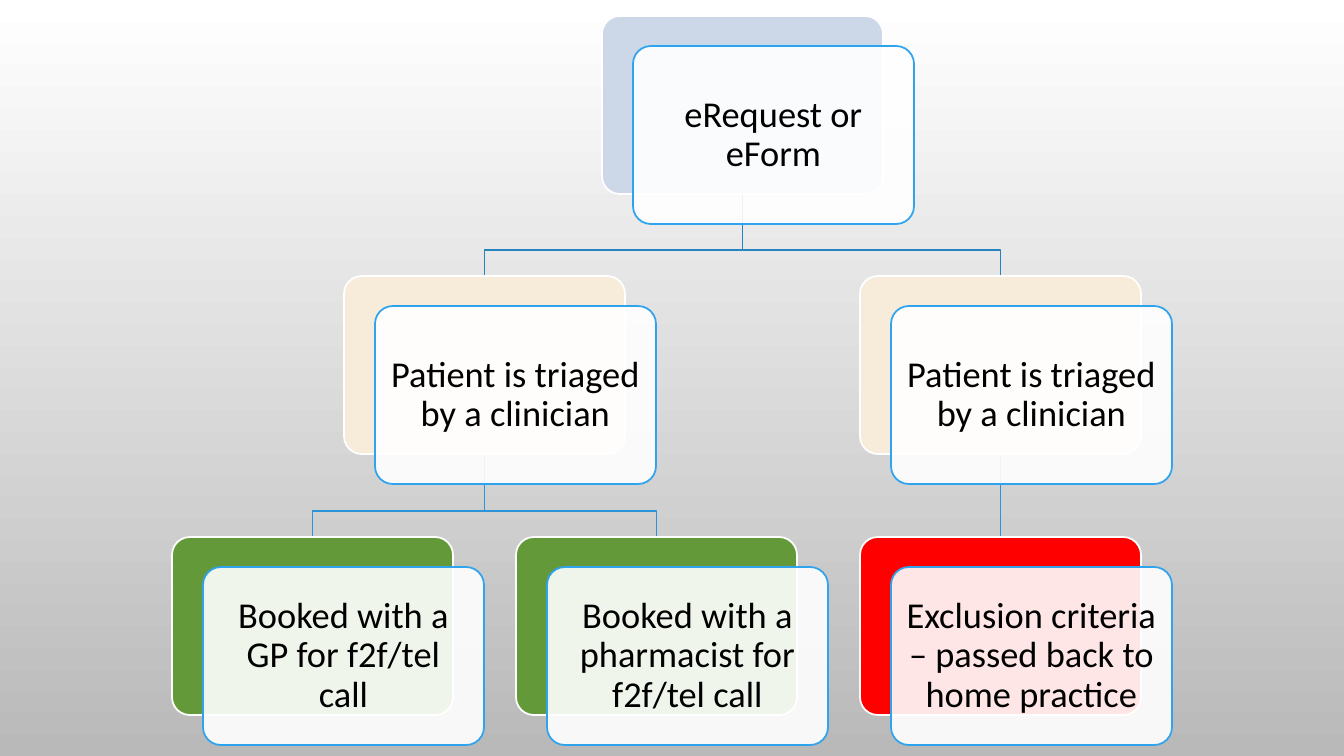
from lxml import etree
from pptx import Presentation
from pptx.dml.color import RGBColor
from pptx.enum.shapes import MSO_CONNECTOR, MSO_SHAPE
from pptx.enum.text import MSO_ANCHOR, PP_ALIGN
from pptx.oxml.ns import qn
from pptx.util import Pt

PX = 914400 / 100.8
ROUNDED = MSO_SHAPE.ROUNDED_RECTANGLE
STRAIGHT = MSO_CONNECTOR.STRAIGHT
MIDDLE = MSO_ANCHOR.MIDDLE
CENTER = PP_ALIGN.CENTER
BOTTOM_SITE, TOP_SITE = 2, 0

COLORS = {
    "white": "FFFFFF", "background_end": "B9B9B9", "text": "000000",
    "request": "CCD8E7", "triage": "F7EBD9", "booked": "649939",
    "excluded": "FF0000", "card_line": "2FA3EE",
    "upper_link": "2683BF", "lower_link": "2B94D8",
}
CARD_WIDTH, CARD_HEIGHT = 281, 178
OFFSET_X, OFFSET_Y = 31, 30
COLUMN = 172
ROW_TOPS = [16, 276, 537]
BRANCH_GAP = 26

# name: (column, row, colour, text)
STEPS = {
    "request": (3.5, 0, "request", "eRequest or eForm"),
    "triage_left": (2, 1, "triage", "Patient is triaged by a clinician"),
    "gp": (1, 2, "booked", "Booked with a GP for f2f/tel call"),
    "pharmacist": (3, 2, "booked", "Booked with a pharmacist for f2f/tel call"),
    "triage_right": (5, 1, "triage", "Patient is triaged by a clinician"),
    "exclusion": (5, 2, "excluded", "Exclusion criteria – passed back to home practice"),
}
LINKS = [
    ("request", "triage_left", "upper_link"),
    ("triage_left", "gp", "lower_link"),
    ("triage_left", "pharmacist", "lower_link"),
    ("request", "triage_right", "upper_link"),
    ("triage_right", "exclusion", "lower_link"),
]


def px(length):
    return round(length * PX)


def add_card(left, top, fill, line):
    card = slide.shapes.add_shape(
        ROUNDED, px(left), px(top), px(CARD_WIDTH), px(CARD_HEIGHT))
    card.adjustments[0] = 0.1
    card.shadow.inherit = False
    card.fill.solid()
    card.fill.fore_color.rgb = RGBColor.from_string(COLORS[fill])
    card.line.color.rgb = RGBColor.from_string(COLORS[line])
    card.line.width = Pt(1.25)
    return card


presentation = Presentation()
presentation.slide_width = px(1344)
presentation.slide_height = px(756)
slide = presentation.slides.add_slide(presentation.slide_layouts[6])

background = slide.background.fill
background.gradient()
background.gradient_angle = 270
for stop, color in zip(background.gradient_stops, ("white", "background_end")):
    stop.color.rgb = RGBColor.from_string(COLORS[color])

back_cards = {}
for name, (column, row, color, text) in STEPS.items():
    left, top = COLUMN * column, ROW_TOPS[row]
    back_cards[name] = add_card(left, top, color, "white")
    front_card = add_card(left + OFFSET_X, top + OFFSET_Y, "white", "card_line")
    front_color = front_card.fill._xPr.find(".//" + qn("a:srgbClr"))
    etree.SubElement(front_color, qn("a:alpha"), val="90000")

    frame = front_card.text_frame
    frame.word_wrap = True
    frame.vertical_anchor = MIDDLE
    for side in ("left", "top", "right", "bottom"):
        setattr(frame, f"margin_{side}", px(10))
    paragraph = frame.paragraphs[0]
    paragraph.text = text
    paragraph.alignment = CENTER
    paragraph.line_spacing = 0.9
    font_format = {"name": "Calibri", "size": Pt(26)}
    for attribute, value in font_format.items():
        setattr(paragraph.font, attribute, value)
    paragraph.font.color.rgb = RGBColor.from_string(COLORS["text"])

for parent_name, child_name, color in LINKS:
    parent, child = back_cards[parent_name], back_cards[child_name]
    start_x = parent.left + parent.width // 2
    start_y = parent.top + parent.height
    end_x = child.left + child.width // 2
    if start_x == end_x:
        link = slide.shapes.add_connector(
            STRAIGHT, start_x, start_y, end_x, child.top)
        link.begin_connect(parent, BOTTOM_SITE)
        link.end_connect(child, TOP_SITE)
        etree.SubElement(link._element.spPr, qn("a:effectLst"))
    else:
        branch_y = child.top - px(BRANCH_GAP)
        builder = slide.shapes.build_freeform(start_x, start_y)
        builder.add_line_segments(
            [(start_x, branch_y), (end_x, branch_y), (end_x, child.top)],
            close=False)
        link = builder.convert_to_shape()
        link.shadow.inherit = False
        link.fill.background()
    link.line.color.rgb = RGBColor.from_string(COLORS[color])
    link.line.width = Pt(1.25)
    # Links lie behind all cards
    slide.shapes._spTree.insert(2, link._element)

presentation.save("out.pptx")
